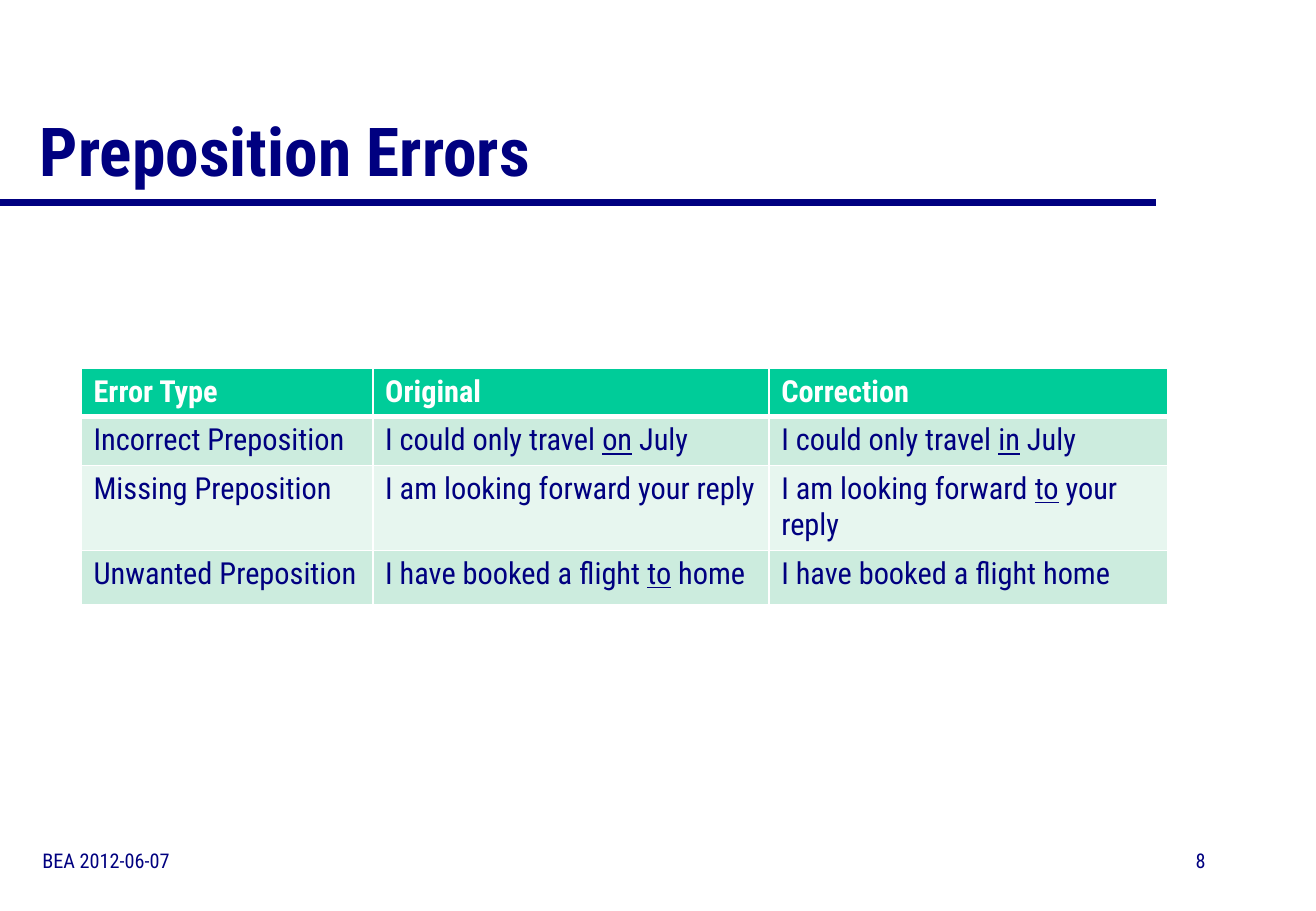
"""Build the slide on preposition errors with its table of examples."""
from lxml import etree
from pptx import Presentation, util as u
from pptx.dml.color import RGBColor
from pptx.enum import shapes, text
from pptx.oxml.ns import qn

COLORS = {"navy": "000080", "white": "FFFFFF", "header": "00CC99",
          "odd": "CCECDE", "even": "E7F6EF"}
FONT = "Roboto Condensed"
ROWS = [
    ("Error Type", "Original", "Correction"),
    ("Incorrect Preposition", "I could only travel _on_ July", "I could only travel _in_ July"),
    ("Missing Preposition", "I am looking forward your reply",
     "I am looking forward _to_ your reply"),
    ("Unwanted Preposition", "I have booked a flight _to_ home", "I have booked a flight home"),
]
COL_WIDTHS = [2.4, 3.26, 3.28]
ROW_HEIGHTS = [0.36, 0.36, 0.36, 0.45]


def add_runs(p, words, size, color="navy", bold=False):
    """Add runs to a paragraph, underlining the parts between underscores."""
    for i, part in enumerate(words.split("_")):
        r = p.add_run()
        r.text = part
        r.font.name = FONT
        r.font.size = u.Pt(size)
        r.font.bold = bold
        r.font.underline = i % 2 == 1
        r.font.color.rgb = RGBColor.from_string(COLORS[color])


def add_border(cell, side, width):
    """Draw one white cell border."""
    ln = etree.SubElement(cell._tc.get_or_add_tcPr(), qn(f"a:ln{side}"), w=str(u.Pt(width)))
    fill = etree.SubElement(ln, qn("a:solidFill"))
    etree.SubElement(fill, qn("a:srgbClr"), val=COLORS["white"])


prs = Presentation()
prs.slide_width, prs.slide_height = u.Inches(10.83), u.Inches(7.5)
s = prs.slides.add_slide(prs.slide_layouts[6])

rule = s.shapes.add_connector(shapes.MSO_CONNECTOR.STRAIGHT, 0, u.Inches(1.67),
                              u.Inches(9.51), u.Inches(1.67))
rule.line.color.rgb = RGBColor.from_string(COLORS["navy"])
rule.line.width = u.Pt(4)
etree.SubElement(rule._element.spPr, qn("a:effectLst"))

LEFT, RIGHT = text.PP_ALIGN.LEFT, text.PP_ALIGN.RIGHT
BOTTOM, MIDDLE = text.MSO_ANCHOR.BOTTOM, text.MSO_ANCHOR.MIDDLE
for words, box, size, bold, align, anchor, spacing in [
    ("Preposition Errors", (0.23, 0.26, 9.25, 1.36), 40, True, LEFT, BOTTOM, 0.9),
    ("BEA 2012-06-07", (0.25, 6.83, 3.43, 0.5), 12, False, LEFT, MIDDLE, 1.0),
    ("8", (7.76, 6.83, 2.26, 0.5), 12, False, RIGHT, MIDDLE, 1.0),
]:
    tf = s.shapes.add_textbox(*map(u.Inches, box)).text_frame
    tf.word_wrap = True
    tf.vertical_anchor = anchor
    p = tf.paragraphs[0]
    p.alignment = align
    p.line_spacing = spacing
    add_runs(p, words, size, bold=bold)

table = s.shapes.add_table(len(ROWS), len(COL_WIDTHS), u.Inches(0.67), u.Inches(3.03),
                           u.Inches(sum(COL_WIDTHS)), u.Inches(sum(ROW_HEIGHTS))).table
for col, width in zip(table.columns, COL_WIDTHS):
    col.width = u.Inches(width)
for row, height in zip(table.rows, ROW_HEIGHTS):
    row.height = u.Inches(height)

for i, row in enumerate(ROWS):
    header = i == 0
    fill = "header" if header else "odd" if i % 2 else "even"
    for j, words in enumerate(row):
        cell = table.cell(i, j)
        add_runs(cell.text_frame.paragraphs[0], words, 18,
                 "white" if header else "navy", header)
        for side, width in [("L", 1), ("R", 1), ("T", 3 if i == 1 else 1),
                            ("B", 3 if header else 1)]:
            add_border(cell, side, width)
        cell.fill.solid()
        cell.fill.fore_color.rgb = RGBColor.from_string(COLORS[fill])

prs.save("out.pptx")
